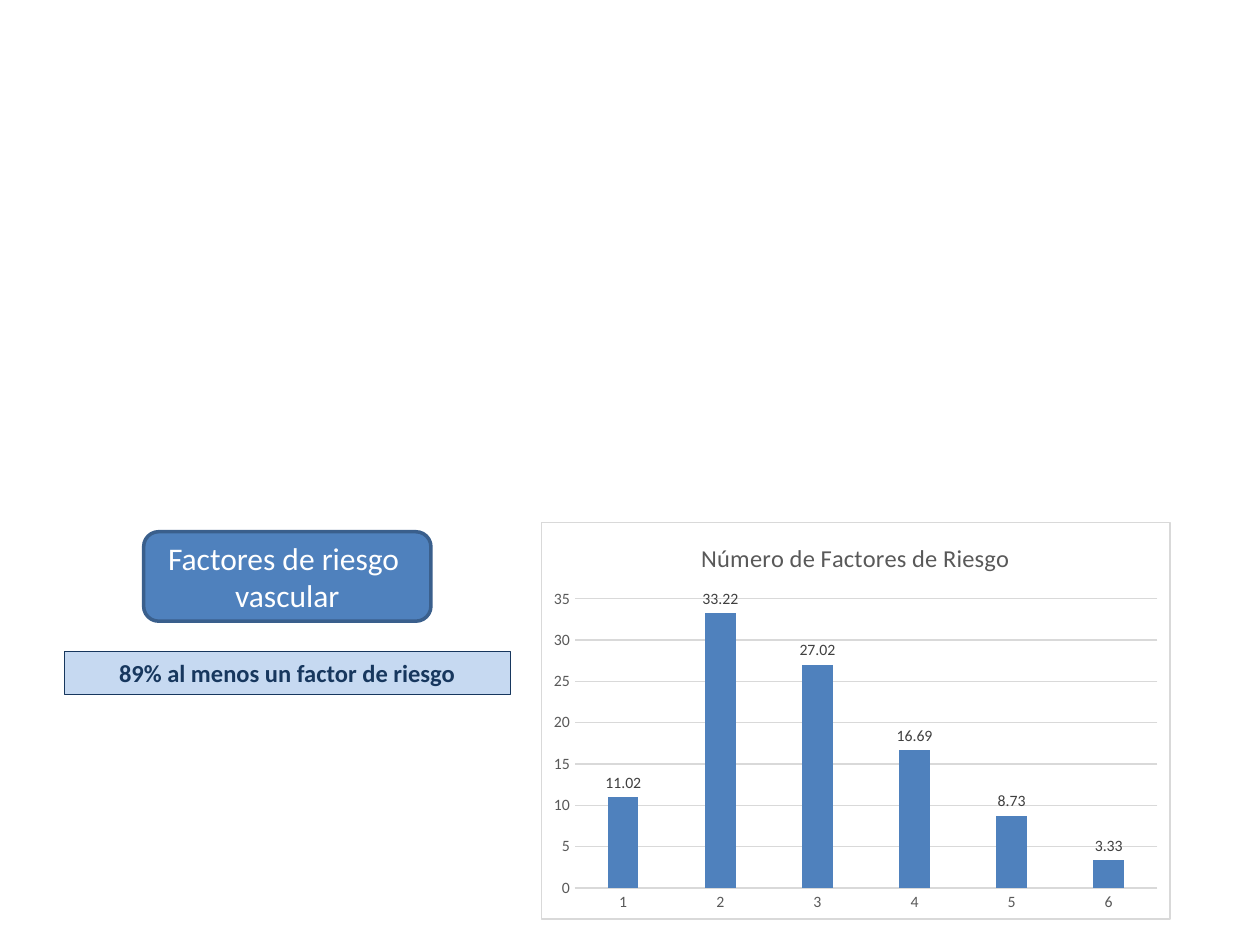
from dataclasses import dataclass

from lxml.etree import fromstring
from pptx import Presentation
from pptx.chart.axis import _BaseAxis
from pptx.chart.data import CategoryChartData
from pptx.dml.color import RGBColor
from pptx.enum.chart import XL_CHART_TYPE, XL_LABEL_POSITION, XL_TICK_MARK
from pptx.enum.shapes import MSO_SHAPE
from pptx.enum.text import MSO_ANCHOR, PP_ALIGN
from pptx.slide import Slide
from pptx.text.text import Font
from pptx.util import Inches, Pt

BLUE = "4F81BD"
NAVY = "17375E"
GRID_GREY = "D9D9D9"
TEXT_GREY = "595959"
RISK_FACTOR_PERCENTAGES = {
    "1": 11.02, "2": 33.22, "3": 27.02, "4": 16.69, "5": 8.73, "6": 3.33,
}


@dataclass
class Box:
    lines: list[str]
    left: float
    top: float
    width: float
    height: float
    preset: MSO_SHAPE
    fill: str
    outline: str
    outline_width: float
    font_format: dict


BOXES = [
    Box(["89% al menos un factor de riesgo"], 0.51, 5.17, 3.54, 0.34,
        MSO_SHAPE.RECTANGLE, "C6D9F1", NAVY, 0.75,
        {"size": Pt(14), "bold": True, "color": NAVY}),
    Box(["Factores de riesgo ", "vascular"], 1.14, 4.22, 2.28, 0.71,
        MSO_SHAPE.ROUNDED_RECTANGLE, BLUE, "3A5F8C", 2,
        {"size": Pt(18), "bold": False, "color": "FFFFFF"}),
]


def color(hex_value: str) -> RGBColor:
    return RGBColor.from_string(hex_value)


def format_font(font: Font, font_format: dict) -> None:
    font.name = "Calibri"
    for name, value in font_format.items():
        if name == "color":
            font.color.rgb = color(value)
        else:
            setattr(font, name, value)


def add_box(slide: Slide, box: Box) -> None:
    shape = slide.shapes.add_shape(
        box.preset, Inches(box.left), Inches(box.top),
        Inches(box.width), Inches(box.height))
    shape.shadow.inherit = False
    shape.fill.solid()
    shape.fill.fore_color.rgb = color(box.fill)
    shape.line.color.rgb = color(box.outline)
    shape.line.width = Pt(box.outline_width)
    frame = shape.text_frame
    frame.word_wrap = True
    frame.vertical_anchor = MSO_ANCHOR.MIDDLE
    for index, line in enumerate(box.lines):
        paragraph = frame.add_paragraph() if index else frame.paragraphs[0]
        paragraph.alignment = PP_ALIGN.CENTER
        run = paragraph.add_run()
        run.text = line
        format_font(run.font, box.font_format)


def format_axis(axis: _BaseAxis) -> None:
    axis.major_tick_mark = XL_TICK_MARK.NONE
    axis.minor_tick_mark = XL_TICK_MARK.NONE
    format_font(axis.tick_labels.font, {"size": Pt(9), "color": TEXT_GREY})


def add_risk_factor_chart(slide: Slide) -> None:
    data = CategoryChartData()
    data.categories = list(RISK_FACTOR_PERCENTAGES)
    data.add_series("Series 1", list(RISK_FACTOR_PERCENTAGES.values()))
    chart = slide.shapes.add_chart(
        XL_CHART_TYPE.COLUMN_CLUSTERED, Inches(4.29), Inches(4.14),
        Inches(5), Inches(3.16), data).chart
    chart.has_legend = False
    format_font(chart.font, {"size": Pt(10), "color": "000000"})
    add_chart_frame(chart)

    title = chart.chart_title.text_frame
    title.text = "Número de Factores de Riesgo"
    format_font(title.paragraphs[0].runs[0].font,
                {"size": Pt(14), "bold": False, "color": TEXT_GREY})

    category_axis, value_axis = chart.category_axis, chart.value_axis
    for axis in (category_axis, value_axis):
        format_axis(axis)
    value_axis.format.line.fill.background()
    value_axis.maximum_scale = 35
    value_axis.minimum_scale = 0
    value_axis.major_unit = 5
    for line in (category_axis.format.line, value_axis.major_gridlines.format.line):
        line.color.rgb = color(GRID_GREY)
        line.width = Pt(0.75)

    plot = chart.plots[0]
    plot.vary_by_categories = False
    plot.gap_width = 219
    plot.overlap = -27
    series = plot.series[0]
    series.format.fill.solid()
    series.format.fill.fore_color.rgb = color(BLUE)
    labels = series.data_labels
    labels.show_value = True
    labels.position = XL_LABEL_POSITION.OUTSIDE_END
    format_font(labels.font, {"size": Pt(9), "color": "404040"})


def add_chart_frame(chart) -> None:
    """Give the chart area a white fill and a thin grey border."""
    frame = fromstring(
        '<c:spPr xmlns:c="http://schemas.openxmlformats.org/drawingml/2006/chart" '
        'xmlns:a="http://schemas.openxmlformats.org/drawingml/2006/main">'
        '<a:solidFill><a:srgbClr val="FFFFFF"/></a:solidFill>'
        f'<a:ln w="{Pt(0.75)}"><a:solidFill><a:srgbClr val="{GRID_GREY}"/>'
        '</a:solidFill></a:ln></c:spPr>')
    chart.element.chart.addnext(frame)


def main() -> None:
    presentation = Presentation()
    presentation.slide_width = Inches(10)
    presentation.slide_height = Inches(7.5)
    slide = presentation.slides.add_slide(presentation.slide_layouts[6])
    add_risk_factor_chart(slide)
    for box in BOXES:
        add_box(slide, box)
    presentation.save("out.pptx")


if __name__ == "__main__":
    main()
